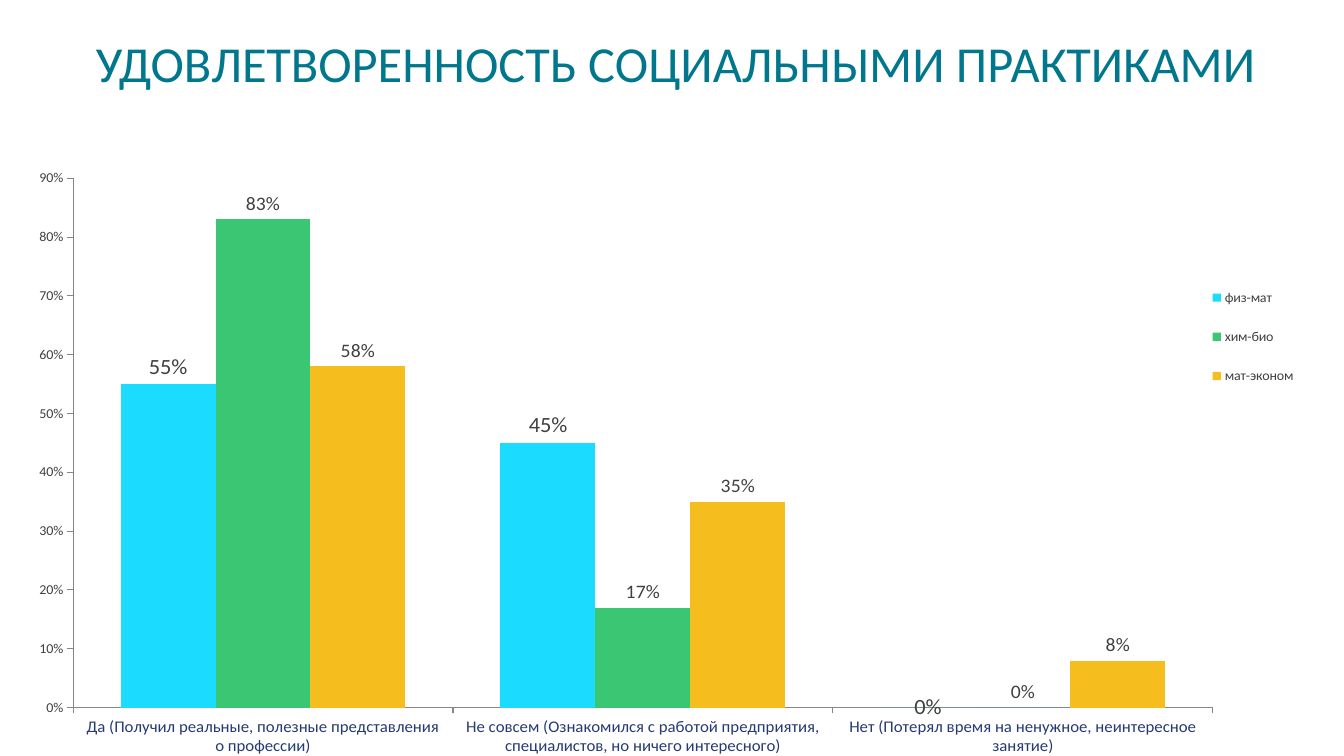
from lxml import etree
from pptx import Presentation
from pptx.chart.data import CategoryChartData
from pptx.dml.color import RGBColor
from pptx.enum.chart import (XL_CHART_TYPE, XL_LABEL_POSITION as LabelPosition,
                             XL_LEGEND_POSITION, XL_TICK_MARK)
from pptx.enum.text import MSO_ANCHOR, PP_ALIGN
from pptx.oxml import parse_xml
from pptx.oxml.ns import nsdecls, qn
from pptx.util import Inches, Pt

FONT = "Calibri"
TEAL = RGBColor(0x00, 0x77, 0x8D)
NAVY = RGBColor(0x26, 0x3A, 0x73)
DARK = RGBColor(0x40, 0x40, 0x40)
GREY = RGBColor(0x86, 0x86, 0x86)
CYAN = RGBColor(0x1B, 0xDC, 0xFF)
GREEN = RGBColor(0x3A, 0xC6, 0x73)
YELLOW = RGBColor(0xF6, 0xBD, 0x1E)

TITLE = "УДОВЛЕТВОРЕННОСТЬ СОЦИАЛЬНЫМИ ПРАКТИКАМИ"
ANSWERS = [
    "Да (Получил реальные, полезные представления о профессии)",
    "Не совсем (Ознакомился с работой предприятия, специалистов, но ничего интересного)",
    "Нет (Потерял время на ненужное, неинтересное занятие)",
]
# name, shares, colour, label size
PROFILES = [
    ("физ-мат", (0.55, 0.45, None), CYAN, 16),
    ("хим-био", (0.83, 0.17, None), GREEN, 14),
    ("мат-эконом", (0.58, 0.35, 0.08), YELLOW, 14),
]


def set_format(target, **values):
    for name, value in values.items():
        setattr(target, name, value)


def set_font(font, size, color):
    set_format(font, name=FONT, size=Pt(size), bold=False)
    font.color.rgb = color


def add_title(page):
    title = page.shapes.title
    set_format(title, left=Inches(0.85), top=Inches(0.27),
               width=Inches(13.27), height=Inches(0.71))
    frame = title.text_frame
    set_format(frame, text=TITLE, word_wrap=True, vertical_anchor=MSO_ANCHOR.TOP)
    para = frame.paragraphs[0]
    set_format(para, alignment=PP_ALIGN.LEFT, line_spacing=1.0)
    set_font(para.runs[0].font, 36, TEAL)


def place(element, before, x, y, w, h, inner=False):
    """Give a chart part a fixed place, as fractions of the chart."""
    for old in element.findall(qn("c:layout")):
        element.remove(old)
    layout = parse_xml(f"<c:layout {nsdecls('c')}><c:manualLayout/></c:layout>")
    values = [("layoutTarget", "inner")] if inner else []
    values += [("xMode", "edge"), ("yMode", "edge"),
               ("x", x), ("y", y), ("w", w), ("h", h)]
    for name, value in values:
        etree.SubElement(layout[0], qn(f"c:{name}")).set("val", str(value))
    element.find(qn(before)).addprevious(layout)


def format_axis(axis, size, color):
    set_format(axis, has_major_gridlines=False,
               major_tick_mark=XL_TICK_MARK.OUTSIDE,
               minor_tick_mark=XL_TICK_MARK.NONE)
    set_font(axis.tick_labels.font, size, color)
    axis.format.line.color.rgb = GREY
    axis.format.line.width = Pt(0.75)


def format_series(series, color, size):
    series.format.fill.solid()
    series.format.fill.fore_color.rgb = color
    series.invert_if_negative = False
    labels = series.data_labels
    set_format(labels, show_value=True, number_format="0%",
               number_format_is_linked=False, position=LabelPosition.OUTSIDE_END)
    set_font(labels.font, size, DARK)


def add_profile_chart(page):
    data = CategoryChartData(number_format="0%")
    data.categories = ANSWERS
    for name, shares, _, _ in PROFILES:
        data.add_series(name, shares)
    chart = page.shapes.add_chart(
        XL_CHART_TYPE.COLUMN_CLUSTERED, Inches(0.22), Inches(1.47),
        Inches(13.27), Inches(6.03), data).chart
    set_format(chart, has_title=False, has_legend=True)
    set_font(chart.font, 10, DARK)

    plot = chart.plots[0]
    set_format(plot, gap_width=100, overlap=0, vary_by_categories=False)
    for series, (_, _, color, size) in zip(plot.series, PROFILES):
        format_series(series, color, size)
    zero_label = plot.series[0].points[2].data_label
    set_font(zero_label.font, 16, DARK)
    zero_label.position = LabelPosition.CENTER

    format_axis(chart.category_axis, 12, NAVY)
    format_axis(chart.value_axis, 10, DARK)
    set_format(chart.value_axis, minimum_scale=0, maximum_scale=0.9, major_unit=0.1)
    set_format(chart.value_axis.tick_labels, number_format="0%",
               number_format_is_linked=False)

    legend = chart.legend
    set_format(legend, position=XL_LEGEND_POSITION.RIGHT, include_in_layout=False)
    set_font(legend.font, 10, DARK)
    chart_part = chart.element.find(qn("c:chart"))
    place(chart_part.find(qn("c:legend")), "c:overlay", 0.88, 0.2, 0.08, 0.24)
    place(chart_part.find(qn("c:plotArea")), "c:barChart",
          0.038, 0.051, 0.852, 0.898, inner=True)
    # Missing shares are drawn and labelled as 0%
    chart_part.find(qn("c:dispBlanksAs")).set("val", "zero")


def main():
    deck = Presentation()
    set_format(deck, slide_width=Inches(13.33), slide_height=Inches(7.5))
    page = deck.slides.add_slide(deck.slide_layouts[5])
    add_profile_chart(page)
    add_title(page)
    deck.save("out.pptx")


if __name__ == "__main__":
    main()
